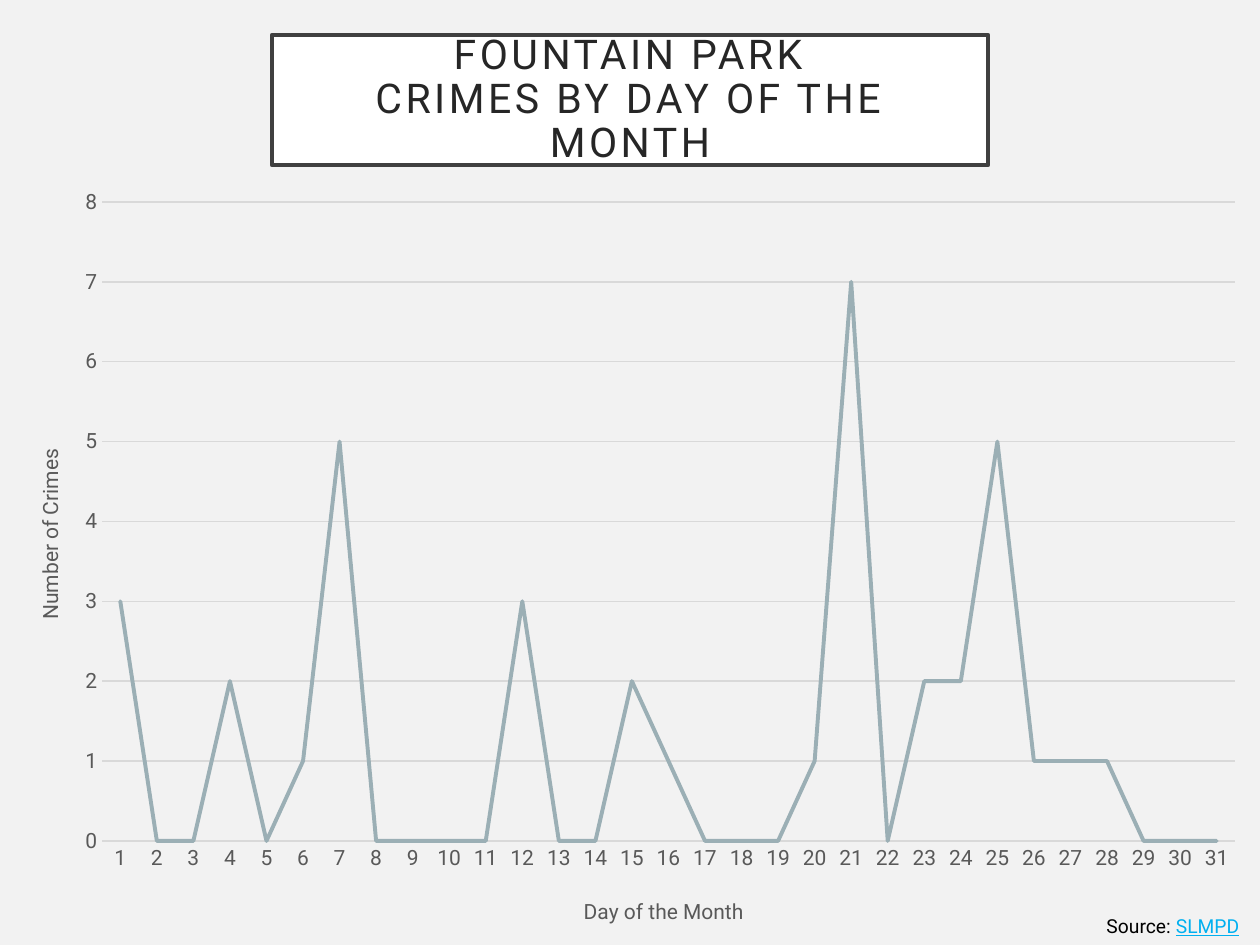
from lxml import etree
from pptx import Presentation
from pptx import util as u
from pptx.chart.data import CategoryChartData
from pptx.dml.color import RGBColor
from pptx.enum import chart as ch, text as t
from pptx.oxml import ns

PX = 914400 / 126
WIDE, HIGH = 1260, 945
FONT = "Roboto"
PAPER = RGBColor(0xF2, 0xF2, 0xF2)
WHITE = RGBColor(0xFF, 0xFF, 0xFF)
BLACK = RGBColor(0, 0, 0)
FRAME = RGBColor(0x40, 0x40, 0x40)
INK = RGBColor(0x26, 0x26, 0x26)
GREY = RGBColor(0x59, 0x59, 0x59)
GRID = RGBColor(0xD9, 0xD9, 0xD9)
STEEL = RGBColor(0x9B, 0xAF, 0xB5)
LINK = RGBColor(0x00, 0xB0, 0xF0)

CRIMES = [3, 0, 0, 2, 0, 1, 5, 0, 0, 0, 0, 3, 0, 0, 2, 1,
          0, 0, 0, 1, 7, 0, 2, 2, 5, 1, 1, 1, 0, 0, 0]


def px(n):
    return u.Emu(round(n * PX))


def style(font, size, color):
    font.name, font.size, font.bold = FONT, u.Pt(size), False
    font.color.rgb = color


def add_run(para, words, size, color):
    run = para.add_run()
    run.text = words
    style(run.font, size, color)
    return run


def inset(frame, side, top):
    frame.margin_left = frame.margin_right = px(side)
    frame.margin_top = frame.margin_bottom = px(top)


def add_title(slide, x, y, w, h):
    box = slide.shapes.title
    box.left, box.top, box.width, box.height = map(px, (x, y, w, h))
    box.fill.solid()
    box.fill.fore_color.rgb = WHITE
    box.line.color.rgb = FRAME
    box.line.width = u.Pt(2.5)
    frame = box.text_frame
    frame.word_wrap = True
    frame.auto_size = t.MSO_AUTO_SIZE.NONE
    frame.vertical_anchor = t.MSO_ANCHOR.MIDDLE
    inset(frame, 25, 25)
    para = frame.paragraphs[0]
    para.alignment = t.PP_ALIGN.CENTER
    para.line_spacing = 0.9
    for i, words in enumerate(("FOUNTAIN PARK", "CRIMES BY DAY OF THE MONTH")):
        if i:
            para.add_line_break()
        run = add_run(para, words, 23.4, INK)
        run.font._element.set("spc", "200")


def lay_out(part, **spots):
    """Fix a chart part by fractions of the chart's size."""
    layout = part.find(ns.qn("c:layout"))
    if layout is None:
        layout = etree.Element(ns.qn("c:layout"))
        text = part.find(ns.qn("c:tx"))
        if text is None:
            part.insert(0, layout)
        else:
            text.addnext(layout)
    for old in list(layout):
        layout.remove(old)
    manual = etree.SubElement(layout, ns.qn("c:manualLayout"))
    if "w" in spots:
        etree.SubElement(manual, ns.qn("c:layoutTarget")).set("val", "inner")
    for key in ("x", "y"):
        etree.SubElement(manual, ns.qn(f"c:{key}Mode")).set("val", "edge")
    for key, val in spots.items():
        etree.SubElement(manual, ns.qn(f"c:{key}")).set("val", f"{val:.4f}")


def set_axis(axis, words, x, y):
    axis.major_tick_mark = axis.minor_tick_mark = ch.XL_TICK_MARK.NONE
    style(axis.tick_labels.font, 12, GREY)
    title = axis.axis_title
    add_run(title.text_frame.paragraphs[0], words, 12, GREY)
    lay_out(title._element, x=x, y=y)


def add_plot(slide, x, y, w, h):
    data = CategoryChartData()
    data.categories = [str(day + 1) for day in range(len(CRIMES))]
    data.add_series("Series 1", CRIMES)
    chart = slide.shapes.add_chart(
        ch.XL_CHART_TYPE.LINE, *map(px, (x, y, w, h)), data).chart
    chart.has_title = chart.has_legend = False
    style(chart.font, 12, BLACK)

    # Axes and grid
    days, count = chart.category_axis, chart.value_axis
    set_axis(days, "Day of the Month", 580 / w, 718 / h)
    set_axis(count, "Number of Crimes", 32 / w, 270 / h)
    body = count.axis_title.text_frame._txBody.find(ns.qn("a:bodyPr"))
    body.set("rot", "-5400000")
    body.set("vert", "horz")
    count.minimum_scale, count.maximum_scale, count.major_unit = 0, 8, 1
    count.format.line.fill.background()
    for line in (days.format.line, count.major_gridlines.format.line):
        line.color.rgb = GRID
        line.width = u.Pt(0.75)
    area = chart._chartSpace.chart.plotArea
    lay_out(area, x=102 / w, y=27 / h, w=1133 / w, h=639 / h)

    # Crime line
    chart.plots[0].vary_by_categories = False
    crime = chart.plots[0].series[0]
    crime.smooth = False
    crime.marker.style = ch.XL_MARKER_STYLE.NONE
    crime.format.line.color.rgb = STEEL
    crime.format.line.width = u.Pt(2.25)
    crime.format.line._ln.set("cap", "rnd")


def add_source(slide, x, y, w, h):
    frame = slide.shapes.add_textbox(*map(px, (x, y, w, h))).text_frame
    frame.word_wrap = True
    frame.auto_size = t.MSO_AUTO_SIZE.SHAPE_TO_FIT_TEXT
    inset(frame, 12, 6)
    para = frame.paragraphs[0]
    para.alignment = t.PP_ALIGN.CENTER
    add_run(para, "Source: ", 11, BLACK)
    add_run(para, "SLMPD", 11, LINK).font.underline = True


def main():
    deck = Presentation()
    deck.slide_width, deck.slide_height = px(WIDE), px(HIGH)
    slide = deck.slides.add_slide(deck.slide_layouts[5])
    slide.background.fill.solid()
    slide.background.fill.fore_color.rgb = PAPER
    add_source(slide, 1091, 908, 164, 37)
    add_title(slide, 272, 35, 716, 130)
    add_plot(slide, 0, 175, WIDE, 770)
    deck.save("out.pptx")


if __name__ == "__main__":
    main()
